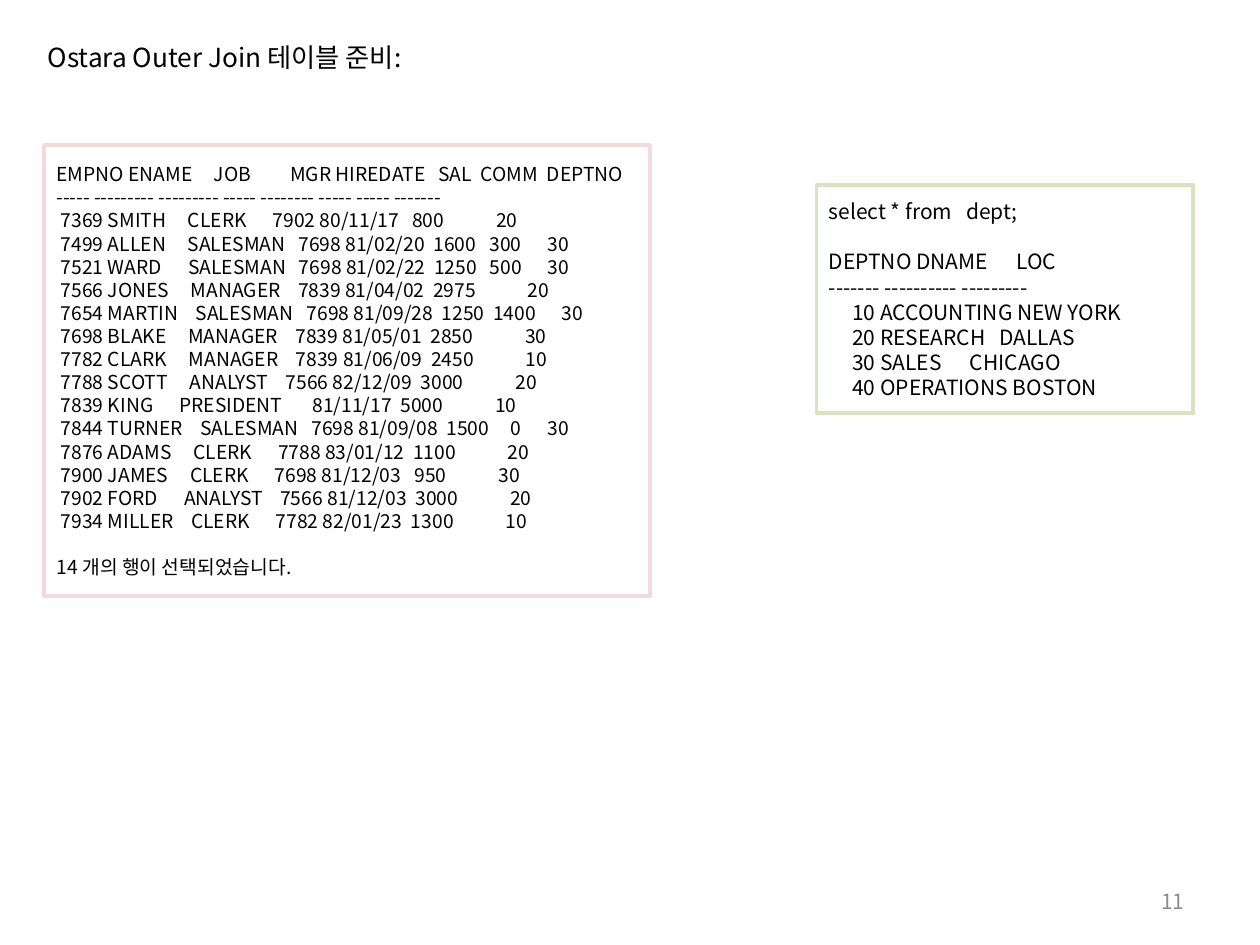
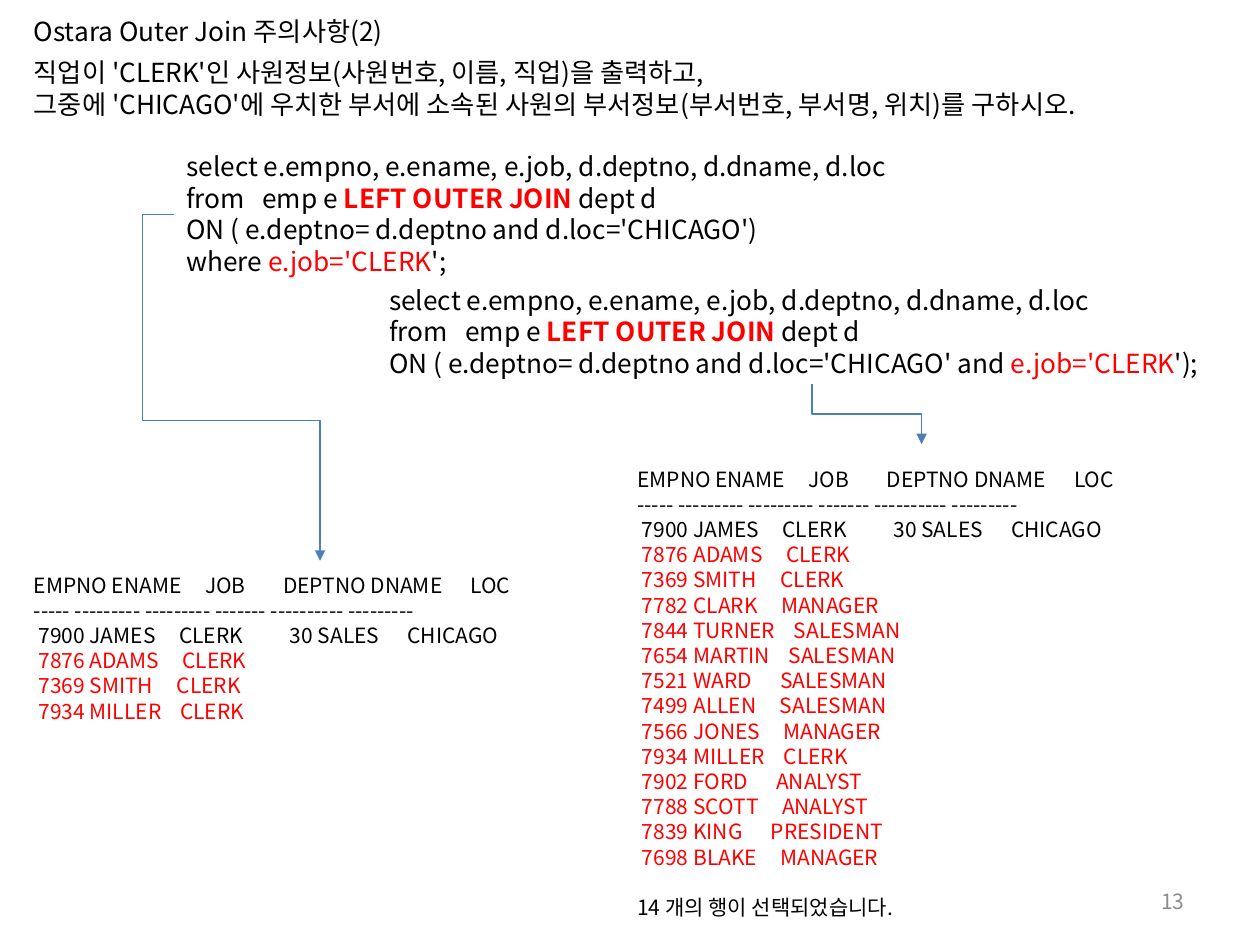
from dataclasses import dataclass
from typing import NamedTuple, Optional, Sequence, Union

from lxml.etree import SubElement
from pptx import Presentation
from pptx.dml.color import RGBColor
from pptx.enum.shapes import MSO_CONNECTOR, MSO_SHAPE
from pptx.enum.text import MSO_ANCHOR, PP_ALIGN
from pptx.oxml.ns import qn
from pptx.slide import Slide
from pptx.util import Emu, Pt

EMU_PER_PX = 9144
FONT = "Noto Sans CJK KR"
BLACK, RED, GRAY, BLUE = "000000", "FF0000", "8C8C8C", "4B7EBC"
PINK, GREEN = "F2DCDB", "D7E4BD"
TITLE_SIZE, TABLE_SIZE, EMP_SIZE = 15, 12, 11
LINE_PITCH = 1.2
PAGE_NUMBER_BOX = (717, 695, 233, 40)


class Span(NamedTuple):
    """A stretch of text with its own colour and weight."""
    text: str
    color: str = BLACK
    bold: bool = False


@dataclass(frozen=True)
class Line:
    """One line of text, with an optional one-line gap above it."""
    spans: Sequence[Span]
    gap: bool = False


class Employee(NamedTuple):
    """One row of the emp table."""
    empno: int
    ename: str
    job: str
    mgr: Union[int, str]
    hired: str
    sal: int
    comm: Union[int, str]
    deptno: int

    def full_row(self) -> str:
        """Return the row with all its columns."""
        return (f"{self.short_row():<25} {self.mgr:>5} {self.hired} "
                f"{self.sal:>5} {self.comm:>5} {self.deptno:>7}")

    def short_row(self) -> str:
        """Return the number, name and job only."""
        return f" {self.empno} {self.ename:<9} {self.job}"


class Department(NamedTuple):
    """One row of the dept table."""
    deptno: int
    dname: str
    loc: str

    def row(self) -> str:
        """Return the row with all its columns."""
        return f"{self.deptno:>7} {self.dname:<10} {self.loc}"


@dataclass(frozen=True)
class Arrow:
    """A bent arrow given by its unrotated corners."""
    begin: tuple[int, int]
    end: tuple[int, int]
    degrees: int
    preset: str
    bends: Sequence[int]


EMPLOYEES = [
    Employee(7369, "SMITH", "CLERK", 7902, "80/11/17", 800, "", 20),
    Employee(7499, "ALLEN", "SALESMAN", 7698, "81/02/20", 1600, 300, 30),
    Employee(7521, "WARD", "SALESMAN", 7698, "81/02/22", 1250, 500, 30),
    Employee(7566, "JONES", "MANAGER", 7839, "81/04/02", 2975, "", 20),
    Employee(7654, "MARTIN", "SALESMAN", 7698, "81/09/28", 1250, 1400, 30),
    Employee(7698, "BLAKE", "MANAGER", 7839, "81/05/01", 2850, "", 30),
    Employee(7782, "CLARK", "MANAGER", 7839, "81/06/09", 2450, "", 10),
    Employee(7788, "SCOTT", "ANALYST", 7566, "82/12/09", 3000, "", 20),
    Employee(7839, "KING", "PRESIDENT", "", "81/11/17", 5000, "", 10),
    Employee(7844, "TURNER", "SALESMAN", 7698, "81/09/08", 1500, 0, 30),
    Employee(7876, "ADAMS", "CLERK", 7788, "83/01/12", 1100, "", 20),
    Employee(7900, "JAMES", "CLERK", 7698, "81/12/03", 950, "", 30),
    Employee(7902, "FORD", "ANALYST", 7566, "81/12/03", 3000, "", 20),
    Employee(7934, "MILLER", "CLERK", 7782, "82/01/23", 1300, "", 10),
]
DEPARTMENTS = [
    Department(10, "ACCOUNTING", "NEW YORK"),
    Department(20, "RESEARCH", "DALLAS"),
    Department(30, "SALES", "CHICAGO"),
    Department(40, "OPERATIONS", "BOSTON"),
]
EMP_HEADER = "EMPNO ENAME     JOB         MGR HIREDATE   SAL  COMM  DEPTNO"
DEPT_HEADER = "DEPTNO DNAME      LOC"
JOIN_HEADER = "EMPNO ENAME     JOB        DEPTNO DNAME      LOC"
WHERE_MATCHES = [7876, 7369, 7934]
ON_MATCHES = [7876, 7369, 7782, 7844, 7654, 7521, 7499,
              7566, 7934, 7902, 7788, 7839, 7698]
ARROWS = [
    Arrow((712, 285), (664, 372), 270, "bentConnector3", [50000]),
    Arrow((254, 445), (138, 170), 180, "bentConnector4", [-21600, 59600]),
]


def px(length: int) -> Emu:
    """Turn px into EMU."""
    return Emu(length * EMU_PER_PX)


def rgb(color: str) -> RGBColor:
    """Turn a hex string into a colour."""
    return RGBColor.from_string(color)


def line(*parts: Union[str, Span], gap: bool = False) -> Line:
    """Make a line from plain strings and spans."""
    return Line([Span(part) if isinstance(part, str) else part for part in parts], gap)


def rule(*widths: int) -> Line:
    """Make the dashed rule below a column header."""
    return line(" ".join("-" * width for width in widths))


def add_text(slide: Slide, box: tuple[int, int, int, int], lines: Sequence[Line], *,
             size: int = TITLE_SIZE, align: PP_ALIGN = PP_ALIGN.LEFT,
             border: Optional[str] = None) -> None:
    """Draw lines of text, framed when a border colour is given."""
    place = [px(length) for length in box]
    if border:
        holder = slide.shapes.add_shape(MSO_SHAPE.RECTANGLE, *place)
        holder.shadow.inherit = False
        holder.fill.background()
        holder.line.color.rgb = rgb(border)
        holder.line.width = Pt(2)
    else:
        holder = slide.shapes.add_textbox(*place)
    frame = holder.text_frame
    frame.word_wrap = True
    frame.vertical_anchor = MSO_ANCHOR.MIDDLE
    pitch = Pt(size * LINE_PITCH)
    for index, content in enumerate(lines):
        paragraph = frame.add_paragraph() if index else frame.paragraphs[0]
        paragraph.alignment = align
        paragraph.line_spacing = pitch
        if content.gap:
            paragraph.space_before = pitch
        for span in content.spans:
            run = paragraph.add_run()
            run.text = span.text
            run.font.size = Pt(size)
            run.font.bold = span.bold
            run.font.color.rgb = rgb(span.color)
            run.font.name = FONT
            SubElement(run.font._element, qn("a:ea"), typeface=FONT)


def add_arrow(slide: Slide, arrow: Arrow) -> None:
    """Draw a bent connector with a triangle at its end."""
    corners = [px(length) for length in (*arrow.begin, *arrow.end)]
    connector = slide.shapes.add_connector(MSO_CONNECTOR.ELBOW, *corners)
    connector.line.color.rgb = rgb(BLUE)
    connector.line.width = Pt(0.75)
    SubElement(connector.line._get_or_add_ln(), qn("a:tailEnd"), type="triangle")
    properties = connector._element.spPr
    SubElement(properties, qn("a:effectLst"))
    properties.find(qn("a:xfrm")).set("rot", str(arrow.degrees * 60000))
    geometry = properties.find(qn("a:prstGeom"))
    geometry.set("prst", arrow.preset)
    guides = geometry.find(qn("a:avLst"))
    if guides is None:
        guides = SubElement(geometry, qn("a:avLst"))
    for number, bend in enumerate(arrow.bends, start=1):
        SubElement(guides, qn("a:gd"), name=f"adj{number}", fmla=f"val {bend}")


def add_page(deck: Presentation, number: int, title: str, left: int, top: int) -> Slide:
    """Add a blank slide with its title and page number."""
    slide = deck.slides.add_slide(deck.slide_layouts[6])
    add_text(slide, PAGE_NUMBER_BOX, [line(Span(str(number), GRAY))],
             size=TABLE_SIZE, align=PP_ALIGN.RIGHT)
    add_text(slide, (left, top, 339, 48), [line(title)])
    return slide


def selected_count() -> Line:
    """Make the closing line that counts all employees."""
    return line(f"{len(EMPLOYEES)} 개의 행이 선택되었습니다.", gap=True)


def join_result(unmatched: Sequence[int]) -> list[Line]:
    """List the Chicago clerk in black and the unmatched employees in red."""
    staff = {employee.empno: employee for employee in EMPLOYEES}
    sales = DEPARTMENTS[2]
    return [
        line(JOIN_HEADER),
        rule(5, 9, 9, 7, 10, 9),
        line(f"{staff[7900].short_row():<25} {sales.row()}"),
        *(line(Span(staff[empno].short_row(), RED)) for empno in unmatched),
    ]


def build_tables_slide(deck: Presentation) -> None:
    """Show the contents of emp and dept."""
    slide = add_page(deck, 11, "Ostara Outer Join 테이블 준비:", 28, 21)
    departments = [
        line("select * from   dept;"),
        line(DEPT_HEADER, gap=True),
        rule(7, 10, 9),
        *(line(department.row()) for department in DEPARTMENTS),
    ]
    employees = [
        line(EMP_HEADER),
        rule(5, 9, 9, 5, 8, 5, 5, 7),
        *(line(employee.full_row()) for employee in EMPLOYEES),
        selected_count(),
    ]
    add_text(slide, (648, 147, 299, 181), departments, size=TABLE_SIZE, border=GREEN)
    add_text(slide, (35, 115, 481, 358), employees, size=EMP_SIZE, border=PINK)


def build_join_slide(deck: Presentation) -> None:
    """Compare a filter in WHERE with the same filter in ON."""
    slide = add_page(deck, 13, "Ostara Outer Join 주의사항(2)", 17, 1)
    task = [
        line("직업이 'CLERK'인 사원정보(사원번호, 이름, 직업)을 출력하고,"),
        line("그중에 'CHICAGO'에 우치한 부서에 소속된 사원의 "
             "부서정보(부서번호, 부서명, 위치)를 구하시오."),
    ]
    select_join = [
        line("select e.empno, e.ename, e.job, d.deptno, d.dname, d.loc"),
        line("from   emp e ", Span("LEFT OUTER JOIN", RED, True), " dept d"),
    ]
    on_chicago = "ON ( e.deptno= d.deptno and d.loc='CHICAGO'"
    clerk = Span("e.job='CLERK", RED)
    where_query = [*select_join, line(on_chicago + ")"), line("where ", clerk, "';")]
    on_query = [*select_join, line(on_chicago + " and ", clerk, "');")]

    add_text(slide, (17, 46, 938, 48), task)
    add_text(slide, (138, 117, 633, 105), where_query)
    add_text(slide, (17, 445, 474, 138), join_result(WHERE_MATCHES), size=TABLE_SIZE)
    add_text(slide, (496, 353, 472, 394),
             [*join_result(ON_MATCHES), selected_count()], size=TABLE_SIZE)
    add_text(slide, (299, 222, 692, 82), on_query)
    for arrow in ARROWS:
        add_arrow(slide, arrow)


def main() -> None:
    """Build and save the deck."""
    deck = Presentation()
    deck.slide_width, deck.slide_height = px(1000), px(750)
    build_tables_slide(deck)
    build_join_slide(deck)
    deck.save("out.pptx")


if __name__ == "__main__":
    main()
